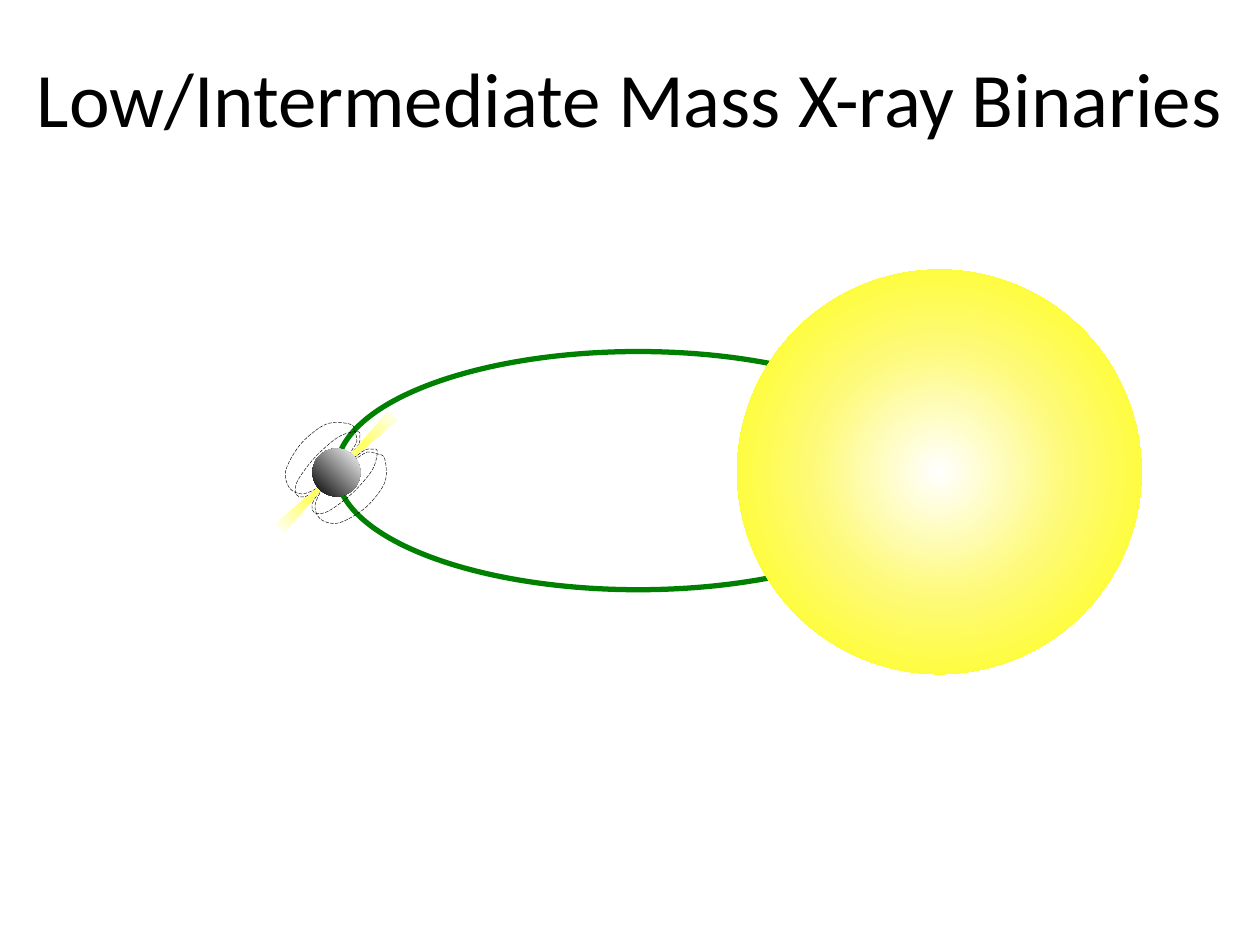
"""Build a slide of a pulsar orbiting a low or intermediate mass companion star."""
from dataclasses import dataclass
from math import cos, radians, sin
from typing import NamedTuple

from lxml.etree import SubElement
from pptx import Presentation
from pptx.dml.color import RGBColor
from pptx.enum.dml import MSO_LINE
from pptx.enum.shapes import MSO_SHAPE
from pptx.enum.text import MSO_AUTO_SIZE, PP_ALIGN
from pptx.oxml.ns import qn
from pptx.shapes.autoshape import Shape
from pptx.shapes.shapetree import GroupShapes, SlideShapes
from pptx.slide import Slide
from pptx.util import Emu, Pt

ELLIPSE = MSO_SHAPE.OVAL
BEAM = MSO_SHAPE.FLOWCHART_COLLATE
LONG_DASH = MSO_LINE.LONG_DASH
CENTER = PP_ALIGN.CENTER
FIT_SHAPE = MSO_AUTO_SIZE.SHAPE_TO_FIT_TEXT

EMU_PER_PX = 9144
TILT = 45


class Point(NamedTuple):
    x: int
    y: int


class Box(NamedTuple):
    left: int
    top: int
    width: int
    height: int


class Gradient(NamedTuple):
    stops: tuple[tuple[int, str], ...]
    focus: tuple[int, int, int, int]


class FieldLoop(NamedTuple):
    side: int
    spread: float


@dataclass(frozen=True)
class Body:
    kind: int
    box: Box
    gradient: Gradient
    rotation: int = 0


@dataclass(frozen=True)
class Theme:
    font: str = "Calibri"
    title_size: int = 44
    title_color: str = "000000"
    orbit_color: str = "008000"
    orbit_width: float = 3
    field_color: str = "000000"
    field_width: float = 0.25
    beam: Gradient = Gradient(((45, "FFFF66"), (100, "FFFFFF")), (50, 50, 50, 50))
    neutron_star: Gradient = Gradient(((0, "FFFFFF"), (100, "000000")), (100, 0, 0, 100))
    companion: Gradient = Gradient(
        ((0, "FFFFFF"), (45, "FEFA77"), (100, "FFFF00")), (50, 50, 50, 50))


THEME = Theme()
TITLE = "Low/Intermediate Mass X-ray Binaries"
TITLE_BOX = Box(15, 35, 970, 84)
ORBIT_BOX = Box(267, 279, 479, 189)
PULSAR_CENTER = Point(267, 375)
LOOP_OUTLINE = tuple(Point(x, y) for x, y in (
    (1, 13), (3, 23), (8, 32), (18, 35), (29, 28), (35, 11), (36, -5),
    (32, -23), (19, -35), (12, -33), (6, -29), (4, -22), (1, -13)))
FIELD_LOOPS = (FieldLoop(1, 1), FieldLoop(-1, 1), FieldLoop(1, 0.57), FieldLoop(-1, 0.57))
PULSAR_BODIES = (
    Body(BEAM, Box(262, 311, 10, 127), THEME.beam, TILT),
    Body(ELLIPSE, Box(248, 356, 38, 38), THEME.neutron_star),
)
COMPANION = Body(ELLIPSE, Box(585, 214, 321, 321), THEME.companion)


def px(length: float) -> Emu:
    """Turn a length in px into EMU."""
    return Emu(round(length * EMU_PER_PX))


def emu_box(box: Box) -> tuple[Emu, ...]:
    """Turn a box in px into EMU."""
    return tuple(px(length) for length in box)


def set_line(shape: Shape, color: str, width: float) -> None:
    """Give a shape an outline without fill or shadow."""
    shape.shadow.inherit = False
    shape.fill.background()
    shape.line.color.rgb = RGBColor.from_string(color)
    shape.line.width = Pt(width)


def set_radial_fill(shape: Shape, gradient: Gradient) -> None:
    """Fill a shape with a circular gradient."""
    shape.fill.gradient()
    fill = shape._element.spPr.find(qn("a:gradFill"))
    for child in list(fill):
        fill.remove(child)
    stops = SubElement(fill, qn("a:gsLst"))
    for position, color in gradient.stops:
        stop = SubElement(stops, qn("a:gs"), pos=str(position * 1000))
        SubElement(stop, qn("a:srgbClr"), val=color)
    circle = SubElement(fill, qn("a:path"), path="circle")
    edges = {edge: str(value * 1000) for edge, value in zip("ltrb", gradient.focus)}
    SubElement(circle, qn("a:fillToRect"), edges)


def smooth_segments(shape: Shape, anchors: list[tuple[Emu, Emu]]) -> None:
    """Turn the straight segments of a freeform into smooth Bezier curves."""
    local = [(x - shape.left, y - shape.top) for x, y in anchors]
    padded = [local[0], *local, local[-1]]
    outline = next(shape._element.iter(qn("a:path")))
    for line in outline.findall(qn("a:lnTo")):
        outline.remove(line)
    for before, start, end, after in zip(padded, padded[1:], padded[2:], padded[3:]):
        leaving = [s + (e - b) / 6 for b, s, e in zip(before, start, end)]
        arriving = [e - (a - s) / 6 for s, e, a in zip(start, end, after)]
        curve = SubElement(outline, qn("a:cubicBezTo"))
        for x, y in (leaving, arriving, end):
            SubElement(curve, qn("a:pt"), x=str(round(x)), y=str(round(y)))


def draw_body(shapes: SlideShapes | GroupShapes, body: Body) -> None:
    """Draw a glowing body without an outline."""
    shape = shapes.add_shape(body.kind, *emu_box(body.box))
    shape.shadow.inherit = False
    shape.line.fill.background()
    shape.rotation = body.rotation
    set_radial_fill(shape, body.gradient)


def draw_field_loop(shapes: GroupShapes, loop: FieldLoop) -> None:
    """Draw one magnetic field loop tilted about the pulsar centre."""
    anchors = [(px(loop.side * loop.spread * point.x), px(point.y))
               for point in LOOP_OUTLINE]
    builder = shapes.build_freeform(*anchors[0])
    builder.add_line_segments(anchors[1:], close=False)
    shape = builder.convert_to_shape()
    smooth_segments(shape, anchors)
    middle_x = shape.left + shape.width / 2
    middle_y = shape.top + shape.height / 2
    cosine, sine = cos(radians(TILT)), sin(radians(TILT))
    center_x = px(PULSAR_CENTER.x) + middle_x * cosine - middle_y * sine
    center_y = px(PULSAR_CENTER.y) + middle_x * sine + middle_y * cosine
    shape.left = round(center_x - shape.width / 2)
    shape.top = round(center_y - shape.height / 2)
    shape.rotation = TILT
    set_line(shape, THEME.field_color, THEME.field_width)
    shape.line.dash_style = LONG_DASH


def draw_title(slide: Slide) -> None:
    """Write the slide title."""
    frame = slide.shapes.add_textbox(*emu_box(TITLE_BOX)).text_frame
    frame.word_wrap = False
    frame.auto_size = FIT_SHAPE
    paragraph = frame.paragraphs[0]
    paragraph.text = TITLE
    paragraph.alignment = CENTER
    paragraph.font.name = THEME.font
    paragraph.font.size = Pt(THEME.title_size)
    paragraph.font.color.rgb = RGBColor.from_string(THEME.title_color)


def main() -> None:
    """Build and save the presentation."""
    presentation = Presentation()
    presentation.slide_width, presentation.slide_height = px(1000), px(750)
    slide = presentation.slides.add_slide(presentation.slide_layouts[6])
    orbit = slide.shapes.add_shape(ELLIPSE, *emu_box(ORBIT_BOX))
    set_line(orbit, THEME.orbit_color, THEME.orbit_width)
    pulsar = slide.shapes.add_group_shape().shapes
    for loop in FIELD_LOOPS:
        draw_field_loop(pulsar, loop)
    for body in PULSAR_BODIES:
        draw_body(pulsar, body)
    draw_body(slide.shapes, COMPANION)
    draw_title(slide)
    presentation.save("out.pptx")


if __name__ == "__main__":
    main()
